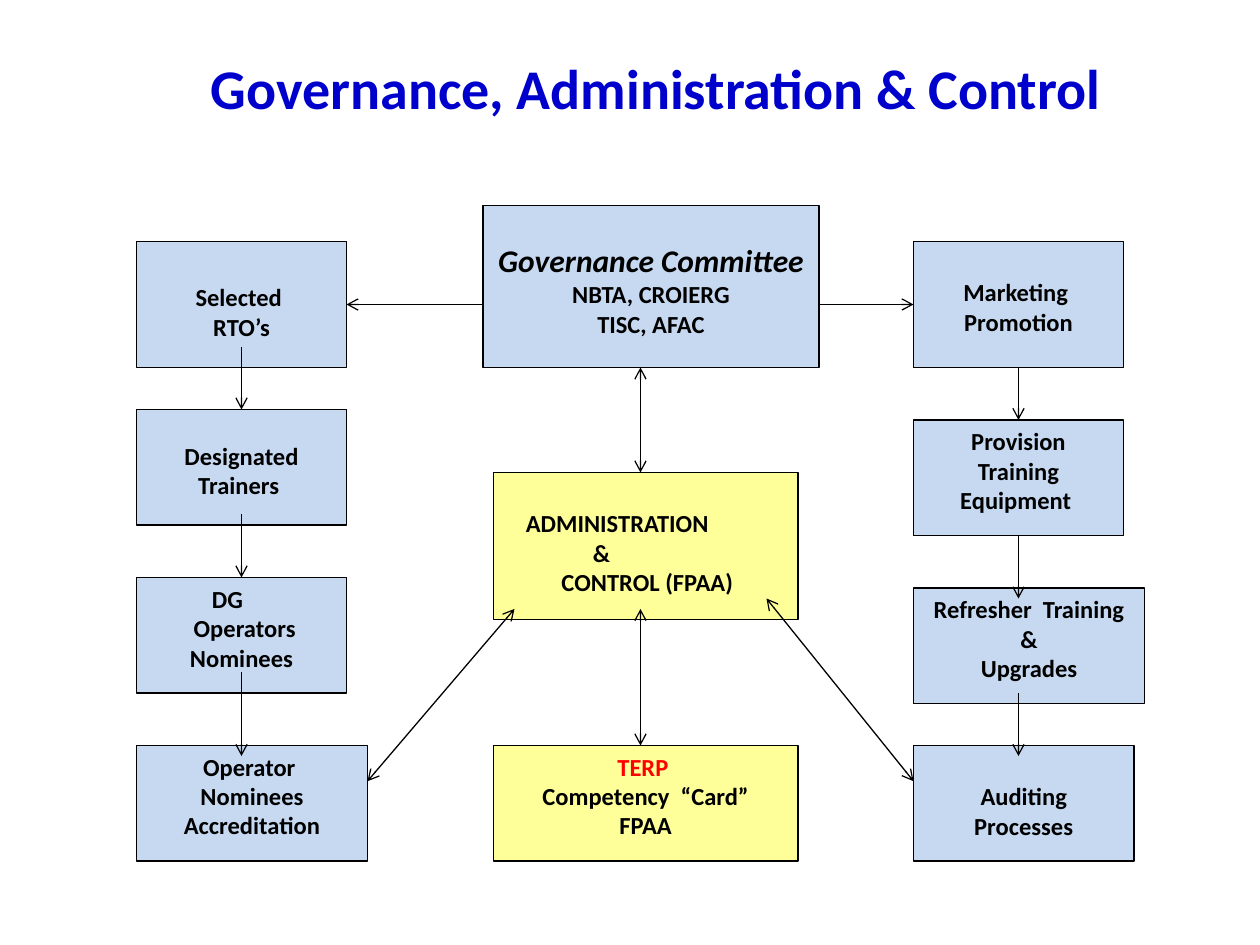
from dataclasses import dataclass

import pptx
import pptx.dml.color
import pptx.enum.shapes
import pptx.enum.text
import pptx.oxml.xmlchemy
import pptx.util

PX = 7620  # EMU; 120 px to the inch
FONT = "Calibri"
BLACK, BLUE, YELLOW = "000000", "C6D9F1", "FFFF99"
ALIGN = pptx.enum.text.PP_ALIGN


@dataclass
class Line:
    text: str
    size: int = 14
    italic: bool = False
    color: str = BLACK
    align: ALIGN = ALIGN.CENTER
    indent: int = 0


@dataclass
class Box:
    left: int
    top: int
    width: int
    height: int
    lines: list[Line]
    fill: str = BLUE
    inset: int = 6


@dataclass
class Arrow:
    start: tuple[int, int]
    end: tuple[int, int]
    two_way: bool = False


LEFT, CENTRE, RIGHT = 130, 470, 870
ROW_H, BOTTOM = 110, 710

BOXES = [
    Box(460, 196, 320, 154, [Line("Governance Committee", 18, True),
                             Line("NBTA, CROIERG"), Line("TISC, AFAC")], inset=34),
    Box(LEFT, 230, 200, 120, [Line("Selected "), Line("RTO’s")], inset=39),
    Box(LEFT, 390, 200, ROW_H, [Line("Designated Trainers ")], inset=30),
    Box(LEFT, 550, 200, ROW_H, [Line("DG", align=ALIGN.LEFT, indent=60),
                                Line("Operators", indent=6), Line("Nominees")]),
    Box(LEFT, BOTTOM, 220, ROW_H, [Line("Operator "), Line("Nominees Accreditation")]),
    Box(CENTRE, 450, 290, 140, [Line("ADMINISTRATION", align=ALIGN.LEFT, indent=19),
                                Line("&", align=ALIGN.LEFT, indent=83),
                                Line("CONTROL (FPAA)", align=ALIGN.LEFT, indent=53)],
        YELLOW, 34),
    Box(CENTRE, BOTTOM, 290, ROW_H, [Line("TERP ", color="FF0000"),
                                     Line("Competency  “Card”"), Line("FPAA")], YELLOW),
    Box(RIGHT, 230, 200, 120, [Line("Marketing "), Line("Promotion")], inset=34),
    Box(RIGHT, 400, 200, ROW_H, [Line("Provision"), Line("Training"), Line("Equipment ")]),
    Box(RIGHT, 560, 220, ROW_H, [Line("Refresher  Training &"), Line("Upgrades")]),
    Box(RIGHT, BOTTOM, 210, ROW_H, [Line("Auditing"), Line("Processes")], inset=34),
]

LEFT_AXIS, CENTRE_AXIS, RIGHT_AXIS = 230, 610, 970


def down_arrows(x: int, spans: list[tuple[int, int]]) -> list[Arrow]:
    return [Arrow((x, top), (x, bottom)) for top, bottom in spans]


ARROWS = [
    Arrow((460, 290), (330, 290)),
    Arrow((780, 290), (RIGHT, 290)),
    *down_arrows(LEFT_AXIS, [(330, 390), (490, 550), (640, 720)]),
    *down_arrows(RIGHT_AXIS, [(350, 400), (510, 570), (660, 720)]),
    Arrow((CENTRE_AXIS, 450), (CENTRE_AXIS, 350), True),
    Arrow((CENTRE_AXIS, BOTTOM), (CENTRE_AXIS, 580), True),
    Arrow((350, 744), (490, 580), True),
    Arrow((RIGHT, 744), (730, 570), True),
]


def rgb(value: str) -> pptx.dml.color.RGBColor:
    return pptx.dml.color.RGBColor.from_string(value)


def format_font(font, color: str, **values) -> None:
    for name, value in {"name": FONT, "bold": True, **values}.items():
        setattr(font, name, value)
    font.color.rgb = rgb(color)


def format_outline(outline) -> None:
    outline.color.rgb = rgb(BLACK)
    outline.width = pptx.util.Pt(0.75)


def draw_title(slide, text: str) -> None:
    title = slide.shapes.title
    place = {"left": 110, "top": 36, "width": 1030, "height": 94}
    for name, value in place.items():
        setattr(title, name, value * PX)
    title.text_frame.text = text
    title.text_frame.vertical_anchor = pptx.enum.text.MSO_ANCHOR.MIDDLE
    heading = title.text_frame.paragraphs[0]
    heading.alignment = ALIGN.CENTER
    format_font(heading.runs[0].font, "0000CC", size=pptx.util.Pt(32))


def draw_box(slide, box: Box) -> None:
    rect = slide.shapes.add_shape(
        pptx.enum.shapes.MSO_SHAPE.RECTANGLE,
        *(value * PX for value in (box.left, box.top, box.width, box.height)))
    rect.shadow.inherit = False
    rect.fill.solid()
    rect.fill.fore_color.rgb = rgb(box.fill)
    format_outline(rect.line)
    frame = rect.text_frame
    settings = {"word_wrap": True, "margin_top": box.inset * PX,
                "vertical_anchor": pptx.enum.text.MSO_ANCHOR.TOP}
    for name, value in settings.items():
        setattr(frame, name, value)
    for index, line in enumerate(box.lines):
        paragraph = frame.add_paragraph() if index else frame.paragraphs[0]
        paragraph.alignment = line.align
        if line.indent:
            properties = paragraph._p.get_or_add_pPr()
            properties.set("marL", str(line.indent * PX))
            properties.set("indent", "0")
        run = paragraph.add_run()
        run.text = line.text
        format_font(run.font, line.color, size=pptx.util.Pt(line.size), italic=line.italic)


def draw_arrow(slide, arrow: Arrow) -> None:
    connector = slide.shapes.add_connector(
        pptx.enum.shapes.MSO_CONNECTOR.STRAIGHT,
        *(value * PX for value in arrow.start + arrow.end))
    format_outline(connector.line)
    outline = connector.line._get_or_add_ln()
    for end in ("a:headEnd", "a:tailEnd") if arrow.two_way else ("a:tailEnd",):
        head = pptx.oxml.xmlchemy.OxmlElement(end)
        head.set("type", "arrow")
        outline.append(head)
    connector._element.spPr.append(pptx.oxml.xmlchemy.OxmlElement("a:effectLst"))


def main() -> None:
    deck = pptx.Presentation()
    deck.slide_width, deck.slide_height = 1200 * PX, 900 * PX
    slide = deck.slides.add_slide(deck.slide_layouts[5])
    draw_title(slide, "Governance, Administration & Control")
    for box in BOXES:
        draw_box(slide, box)
    for arrow in ARROWS:
        draw_arrow(slide, arrow)
    deck.save("out.pptx")


if __name__ == "__main__":
    main()
